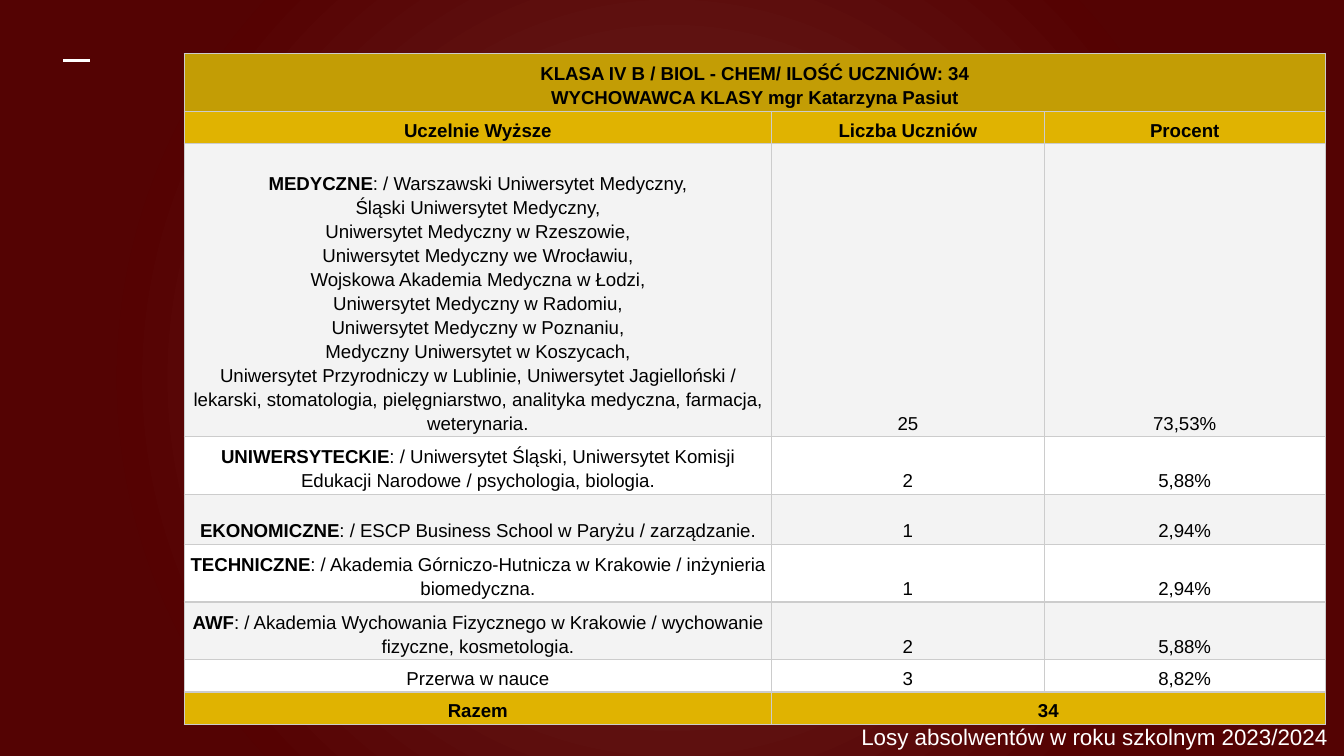
from lxml import etree
from pptx import Presentation
from pptx import util as u
from pptx.dml.color import RGBColor
from pptx.enum import shapes, text
from pptx.oxml import parse_xml
from pptx.oxml.ns import nsdecls, qn

WIDTH = 10
HEIGHT = WIDTH * 9 / 16
FONT = "Arial"
COLORS = {
    "heading": "C39D05", "gold": "E0B301", "odd": "F3F3F3", "even": "FFFFFF",
    "border": "CCCCCC", "text": "000000", "light": "FFFFFF",
}
GRADIENT = [(0, "702D2A"), (72, "550202"), (100, "540303")]

HEADING = ["KLASA IV B / BIOL - CHEM/ ILOŚĆ UCZNIÓW: 34",
           "WYCHOWAWCA KLASY mgr Katarzyna Pasiut"]
COLUMNS = ["Uczelnie Wyższe", "Liczba Uczniów", "Procent"]
# Bold group name, paragraphs that follow it, pupils, share, row height
GROUPS = [
    ("MEDYCZNE", [
        ": / Warszawski Uniwersytet Medyczny,",
        "Śląski Uniwersytet Medyczny,",
        "Uniwersytet Medyczny w Rzeszowie,",
        "Uniwersytet Medyczny we Wrocławiu,",
        "Wojskowa Akademia Medyczna w Łodzi,",
        "Uniwersytet Medyczny w Radomiu,",
        "Uniwersytet Medyczny w Poznaniu,",
        "Medyczny Uniwersytet w Koszycach,",
        "Uniwersytet Przyrodniczy w Lublinie, Uniwersytet Jagielloński / lekarski, "
        "stomatologia, pielęgniarstwo, analityka medyczna, farmacja, weterynaria.",
    ], "25", "73,53%", 2.18),
    ("UNIWERSYTECKIE", [": / Uniwersytet Śląski, Uniwersytet Komisji Edukacji Narodowe / "
                        "psychologia, biologia."], "2", "5,88%", 0.43),
    ("EKONOMICZNE", [": / ESCP Business School w Paryżu / zarządzanie."],
     "1", "2,94%", 0.37),
    ("TECHNICZNE", [": / Akademia Górniczo-Hutnicza w Krakowie / inżynieria biomedyczna."],
     "1", "2,94%", 0.43),
    ("AWF", [": / Akademia Wychowania Fizycznego w Krakowie / wychowanie fizyczne, "
             "kosmetologia."], "2", "5,88%", 0.43),
    ("", ["Przerwa w nauce"], "3", "8,82%", 0.24),
]
TOTAL = ["Razem", "34"]
FOOTER = "Losy absolwentów w roku szkolnym 2023/2024"

TABLE_LEFT, TABLE_TOP = 1.37, 0.4
COLUMN_WIDTHS = [4.37, 2.03, 2.09]
SINGLE_ROW, DOUBLE_ROW = 0.24, 0.43
ROW_HEIGHTS = [DOUBLE_ROW, SINGLE_ROW, *(group[-1] for group in GROUPS), SINGLE_ROW]


def rgb(name):
    return RGBColor.from_string(COLORS[name])


def add_run(paragraph, words, size, color, bold=False):
    run = paragraph.add_run()
    run.text = words
    run.font.name, run.font.size, run.font.bold = FONT, u.Pt(size), bold
    run.font.color.rgb = rgb(color)


def paint_background(slide):
    """Fill the background with a radial gradient."""
    slide.background.fill.solid()
    solid = next(slide.background._cSld.iter(qn("a:solidFill")))
    stops = "".join(f'<a:gs pos="{share * 1000}"><a:srgbClr val="{color}"/></a:gs>'
                    for share, color in GRADIENT)
    gradient = parse_xml(
        f'<a:gradFill {nsdecls("a")} rotWithShape="1"><a:gsLst>{stops}</a:gsLst>'
        '<a:path path="circle"><a:fillToRect l="50000" t="50000" r="50000" b="50000"/>'
        '</a:path></a:gradFill>')
    solid.getparent().replace(solid, gradient)


def style_cell(cell, fill):
    cell.margin_left = cell.margin_right = u.Inches(0.03)
    cell.margin_top = cell.margin_bottom = u.Inches(0.02)
    cell.vertical_anchor = text.MSO_ANCHOR.BOTTOM
    properties = cell._tc.get_or_add_tcPr()
    for side in "LRTB":
        properties.append(parse_xml(
            f'<a:ln{side} {nsdecls("a")} w="{u.Pt(0.75)}"><a:solidFill>'
            f'<a:srgbClr val="{COLORS["border"]}"/></a:solidFill></a:ln{side}>'))
    cell.fill.solid()
    cell.fill.fore_color.rgb = rgb(fill)


def write_cell(cell, paragraphs):
    """Write paragraphs, each a list of (words, bold) runs."""
    for index, runs in enumerate(paragraphs):
        frame = cell.text_frame
        paragraph = frame.add_paragraph() if index else frame.paragraphs[0]
        paragraph.alignment = text.PP_ALIGN.CENTER
        paragraph.line_spacing = 1.15
        for words, bold in runs:
            add_run(paragraph, words, 10, "text", bold)


def table_rows():
    """Yield the fill and the cell contents of each row."""
    yield "heading", [[[(line, True)] for line in HEADING]]
    yield "gold", [[[(label, True)]] for label in COLUMNS]
    for index, (name, lines, pupils, share, _) in enumerate(GROUPS):
        description = [[(line, False)] for line in lines]
        if name:
            description[0].insert(0, (name, True))
        yield ("even" if index % 2 else "odd",
               [description, [[(pupils, False)]], [[(share, False)]]])
    yield "gold", [[[(label, True)]] for label in TOTAL]


def add_results_table(slide):
    table = slide.shapes.add_table(
        len(ROW_HEIGHTS), len(COLUMN_WIDTHS), u.Inches(TABLE_LEFT), u.Inches(TABLE_TOP),
        u.Inches(sum(COLUMN_WIDTHS)), u.Inches(sum(ROW_HEIGHTS))).table
    for column, width in zip(table.columns, COLUMN_WIDTHS):
        column.width = u.Inches(width)
    for row, height, (fill, contents) in zip(table.rows, ROW_HEIGHTS, table_rows()):
        row.height = u.Inches(height)
        cells = list(row.cells)
        for cell in cells:
            style_cell(cell, fill)
        if len(contents) < len(cells):
            cells[len(contents) - 1].merge(cells[-1])
        for cell, paragraphs in zip(cells, contents):
            write_cell(cell, paragraphs)


def add_accent_line(slide):
    line = slide.shapes.add_connector(
        shapes.MSO_CONNECTOR.STRAIGHT,
        u.Inches(0.47), u.Inches(0.45), u.Inches(0.67), u.Inches(0.45))
    line.line.color.rgb = rgb("light")
    line.line.width = u.Pt(1.5)
    etree.SubElement(line._element.spPr, qn("a:effectLst"))


def add_footer(slide):
    box = slide.shapes.add_textbox(
        u.Inches(6.31), u.Inches(5.28), u.Inches(WIDTH - 6.31), u.Inches(0.38))
    frame = box.text_frame
    frame.word_wrap = True
    frame.margin_left = frame.margin_right = u.Inches(0.1)
    frame.margin_top = frame.margin_bottom = u.Inches(0.1)
    add_run(frame.paragraphs[0], FOOTER, 12, "light")


def main():
    presentation = Presentation()
    presentation.slide_width = u.Inches(WIDTH)
    presentation.slide_height = u.Inches(HEIGHT)
    slide = presentation.slides.add_slide(presentation.slide_layouts[6])
    paint_background(slide)
    add_accent_line(slide)
    add_results_table(slide)
    add_footer(slide)
    presentation.save("out.pptx")


if __name__ == "__main__":
    main()
